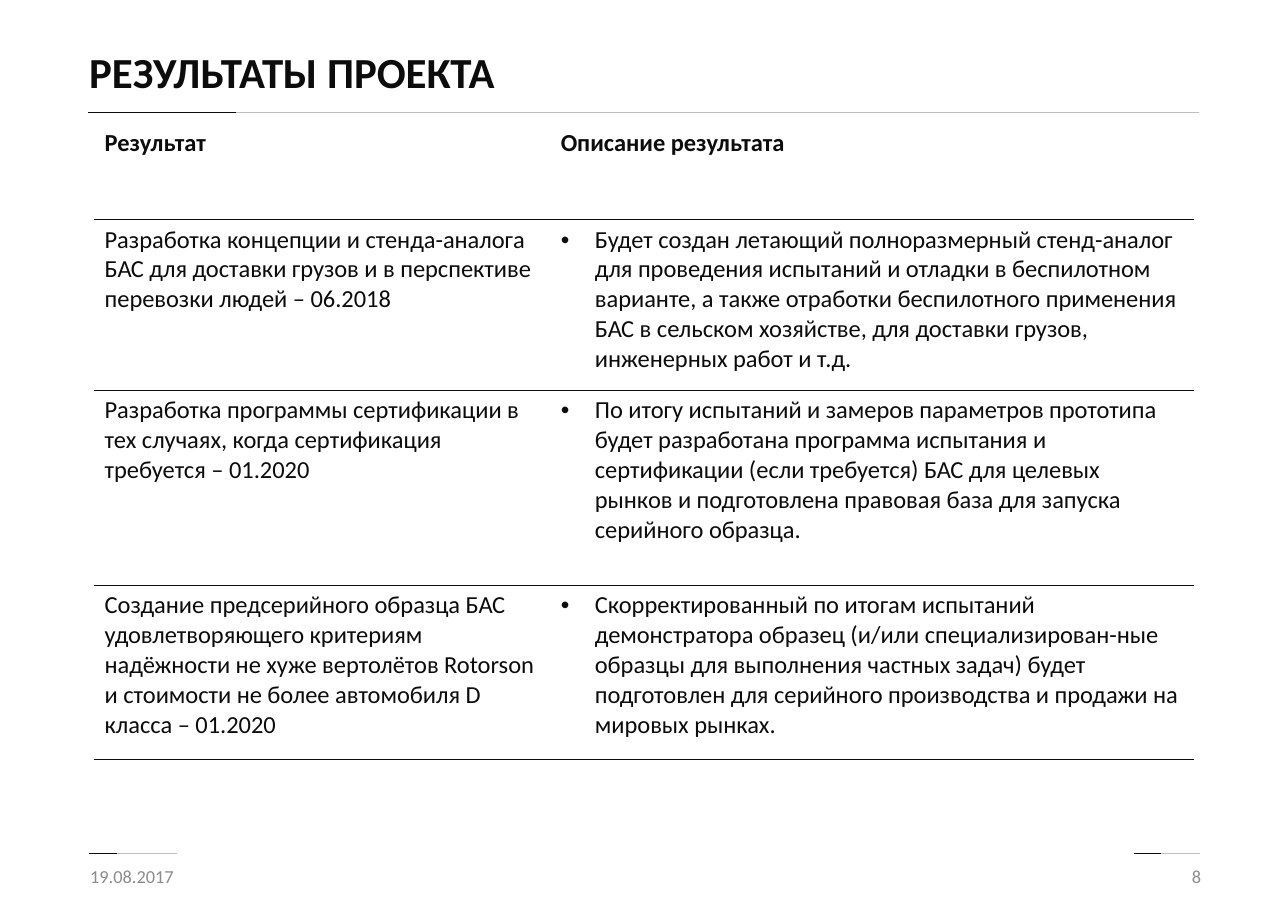
from lxml import etree
from pptx import Presentation
from pptx.dml.color import RGBColor
from pptx.enum.shapes import MSO_CONNECTOR
from pptx.enum.text import MSO_ANCHOR, PP_ALIGN
from pptx.oxml import parse_xml
from pptx.oxml.ns import nsdecls, qn
from pptx.util import Inches, Pt

COLORS = {"ink": "0C0C0C", "rule": "BFBFBF", "footer": "8C8C8C"}
FONT = "Calibri"
NO_STYLE = "{2D5ABB26-0587-4C30-8999-92F81FD0307C}"
HEADINGS = ("Результат", "Описание результата")
RESULTS = [
    (
        "Разработка концепции и стенда-аналога БАС для доставки грузов "
        "и в перспективе перевозки людей – 06.2018",
        "Будет создан летающий полноразмерный стенд-аналог для проведения "
        "испытаний и отладки в беспилотном варианте, а также отработки "
        "беспилотного применения БАС в сельском хозяйстве, для доставки "
        "грузов, инженерных работ и т.д.",
    ),
    (
        "Разработка программы сертификации в тех случаях, когда "
        "сертификация требуется – 01.2020",
        "По итогу испытаний и замеров параметров прототипа будет разработана "
        "программа испытания и сертификации (если требуется) БАС для целевых "
        "рынков и подготовлена правовая база для запуска серийного образца.",
    ),
    (
        "Создание предсерийного образца БАС удовлетворяющего критериям "
        "надёжности не хуже вертолётов Rotorson и стоимости не более "
        "автомобиля D класса – 01.2020",
        "Скорректированный по итогам испытаний демонстратора образец (и/или "
        "специализирован-ные образцы для выполнения частных задач) будет "
        "подготовлен для серийного производства и продажи на мировых рынках.",
    ),
]


def style_paragraph(paragraph, size, color="ink", bold=False, align=PP_ALIGN.LEFT):
    paragraph.alignment = align
    paragraph.font.name = FONT
    paragraph.font.size = Pt(size)
    paragraph.font.bold = bold
    paragraph.font.color.rgb = RGBColor.from_string(COLORS[color])


def add_accent_rule(slide, left, top, width, accent_width):
    for length, color in ((width, "rule"), (accent_width, "ink")):
        line = slide.shapes.add_connector(
            MSO_CONNECTOR.STRAIGHT,
            Inches(left), Inches(top), Inches(left + length), Inches(top),
        )
        line.line.color.rgb = RGBColor.from_string(COLORS[color])
        line.line.width = Pt(0.5)
        etree.SubElement(line._element.spPr, qn("a:effectLst"))


def add_header(slide, left, top, width, height):
    title = slide.shapes.title
    title.left, title.top = Inches(left), Inches(top)
    title.width, title.height = Inches(width), Inches(height)
    frame = title.text_frame
    frame.text = "РЕЗУЛЬТАТЫ ПРОЕКТА"
    frame.vertical_anchor = MSO_ANCHOR.MIDDLE
    paragraph = frame.paragraphs[0]
    paragraph.line_spacing = 0.9
    style_paragraph(paragraph, 28, bold=True)
    add_accent_rule(slide, left + 0.09, top + 0.74, 10.08, 1.34)


def add_footer_text(slide, text, left, top, width, height, align):
    box = slide.shapes.add_textbox(
        Inches(left), Inches(top), Inches(width), Inches(height)
    )
    frame = box.text_frame
    frame.word_wrap = True
    frame.vertical_anchor = MSO_ANCHOR.MIDDLE
    frame.text = text
    style_paragraph(frame.paragraphs[0], 12, "footer", align=align)


def add_footer(slide, left, top, width, height):
    right = left + width
    box_width = 2.63
    add_accent_rule(slide, right - 0.71, top + 0.02, 0.6, 0.25)
    add_accent_rule(slide, left + 0.09, top + 0.02, 0.8, 0.25)
    add_footer_text(slide, "19.08.2017", left, top, box_width, height, PP_ALIGN.LEFT)
    add_footer_text(
        slide, "8", right - box_width, top, box_width, height, PP_ALIGN.RIGHT
    )


def add_bullet(paragraph):
    properties = paragraph._p.get_or_add_pPr()
    properties.set("marL", str(Inches(0.31)))
    properties.set("indent", str(-Inches(0.31)))
    etree.SubElement(properties, qn("a:buFont"), typeface="Arial")
    etree.SubElement(properties, qn("a:buChar"), char="•")


def add_bottom_border(cell):
    border = parse_xml(
        f'<a:lnB {nsdecls("a")} w="{Pt(0.25)}"><a:solidFill>'
        f'<a:srgbClr val="{COLORS["ink"]}"/></a:solidFill></a:lnB>'
    )
    cell._tc.get_or_add_tcPr().insert(0, border)


def add_results_table(slide, left, top, column_widths, row_heights):
    frame = slide.shapes.add_table(
        len(row_heights), len(column_widths), Inches(left), Inches(top),
        Inches(sum(column_widths)), Inches(sum(row_heights)),
    )
    table = frame.table
    table.first_row = table.horz_banding = False
    table._tbl.tblPr.find(qn("a:tableStyleId")).text = NO_STYLE
    for column, width in zip(table.columns, column_widths):
        column.width = Inches(width)
    for row, height in zip(table.rows, row_heights):
        row.height = Inches(height)
    for row_index, texts in enumerate([HEADINGS, *RESULTS]):
        for column_index, text in enumerate(texts):
            cell = table.cell(row_index, column_index)
            cell.text = text
            cell.fill.background()
            add_bottom_border(cell)
            paragraph = cell.text_frame.paragraphs[0]
            if row_index > 0 and column_index == 1:
                add_bullet(paragraph)
            style_paragraph(paragraph, 16, bold=row_index == 0)


def main():
    presentation = Presentation()
    presentation.slide_width = Inches(11.69)
    presentation.slide_height = Inches(8.27)
    slide = presentation.slides.add_slide(presentation.slide_layouts[5])
    add_header(slide, 0.71, 0.28, 7.97, 0.8)
    add_footer(slide, 0.72, 7.73, 10.28, 0.44)
    add_results_table(slide, 0.85, 1.11, (4.14, 5.85), (0.88, 1.55, 1.77, 1.58))
    presentation.save("out.pptx")


if __name__ == "__main__":
    main()
